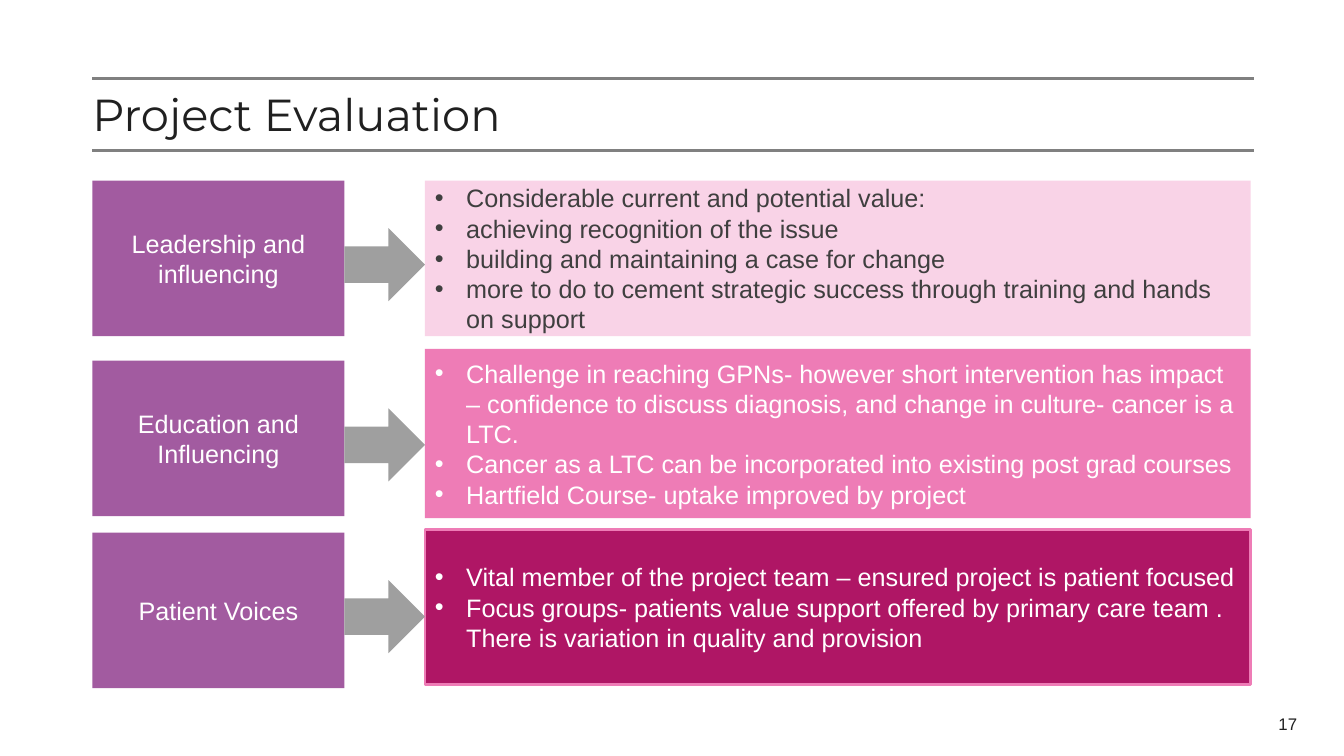
from dataclasses import dataclass

from lxml.etree import SubElement
from pptx import Presentation
from pptx.dml.color import RGBColor
from pptx.enum.shapes import MSO_CONNECTOR, MSO_SHAPE
from pptx.enum.text import MSO_ANCHOR, PP_ALIGN
from pptx.oxml.ns import qn
from pptx.util import Cm, Pt


@dataclass(frozen=True)
class Theme:
    heading_font: str = "Montserrat"
    body_font: str = "Arial"
    title_size: int = 32
    body_size: int = 18
    number_size: int = 12
    ink: str = "202020"
    dark_grey: str = "3F3F3F"
    rule: str = "808080"
    arrow: str = "9F9F9F"
    white: str = "FFFFFF"
    purple: str = "A25BA0"
    pale_pink: str = "F9D3E7"
    pink: str = "EE7CB6"
    magenta: str = "AF1665"


def apply_format(target, values):
    for name, value in values.items():
        setattr(target, name, value)


class SlideBuilder:
    def __init__(self, slide, theme):
        self.slide = slide
        self.theme = theme

    def rule(self, left, right, top):
        connector = self.slide.shapes.add_connector(
            MSO_CONNECTOR.STRAIGHT, Cm(left), Cm(top), Cm(right), Cm(top))
        connector.line.color.rgb = RGBColor.from_string(self.theme.rule)
        connector.line.width = Pt(2.25)
        SubElement(connector.element.spPr, qn("a:effectLst"))

    def block(self, preset, box, fill, outline=None):
        shape = self.slide.shapes.add_shape(preset, *map(Cm, box))
        shape.shadow.inherit = False
        shape.fill.solid()
        shape.fill.fore_color.rgb = RGBColor.from_string(fill)
        if outline:
            shape.line.color.rgb = RGBColor.from_string(outline)
            shape.line.width = Pt(2)
        else:
            shape.line.fill.background()
        return shape

    def text_box(self, box, text, margin=None, **style):
        shape = self.slide.shapes.add_textbox(*map(Cm, box))
        if margin is not None:
            sides = ("left", "top", "right", "bottom")
            apply_format(shape.text_frame, {f"margin_{side}": Cm(margin) for side in sides})
        self.add_text(shape, [text], **style)

    def add_text(self, shape, texts, color, size=None, font=None,
                 align=PP_ALIGN.LEFT, bullets=False):
        frame = shape.text_frame
        apply_format(frame, {"word_wrap": True, "vertical_anchor": MSO_ANCHOR.MIDDLE})
        for index, text in enumerate(texts):
            paragraph = frame.add_paragraph() if index else frame.paragraphs[0]
            paragraph.alignment = align
            run = paragraph.add_run()
            run.text = text
            apply_format(run.font, {"name": font or self.theme.body_font,
                                    "size": Pt(size or self.theme.body_size)})
            run.font.color.rgb = RGBColor.from_string(color)
            if bullets:
                self.bullet(paragraph)

    def bullet(self, paragraph):
        properties = paragraph._p.get_or_add_pPr()
        indent = Cm(0.79)
        properties.set("marL", str(indent))
        properties.set("indent", str(-indent))
        SubElement(properties, qn("a:buFont"), typeface="Arial")
        SubElement(properties, qn("a:buChar"), char="•")


THEME = Theme()
LEFT, TOPIC_WIDTH, ROW_HEIGHT = 2.33, 6.35, 3.92
FINDINGS_LEFT, FINDINGS_WIDTH = 10.71, 20.81
ARROW_HEIGHT, ARROW_OFFSET = 1.84, 1.2

# Topic, topic top, findings top and height, fill, outline, text colour, findings
ROWS = [
    ("Leadership and influencing", 4.55, 4.55, ROW_HEIGHT,
     THEME.pale_pink, None, THEME.dark_grey,
     ["Considerable current and potential value:",
      "achieving recognition of the issue",
      "building and maintaining a case for change",
      "more to do to cement strategic success through training and hands on support"]),
    ("Education and Influencing", 9.09, 8.79, 4.27,
     THEME.pink, None, THEME.white,
     ["Challenge in reaching GPNs- however short intervention has impact – confidence "
      "to discuss diagnosis, and change in culture- cancer is a LTC.",
      "Cancer as a LTC can be incorporated into existing post grad courses",
      "Hartfield Course- uptake improved by project"]),
    ("Patient Voices", 13.42, 13.34, ROW_HEIGHT,
     THEME.magenta, THEME.pink, THEME.white,
     ["Vital member of the project team – ensured project is patient focused",
      "Focus groups- patients value support offered by primary care team . "
      "There is variation in quality and provision"]),
]


def main():
    presentation = Presentation()
    apply_format(presentation, {"slide_width": Cm(33.87), "slide_height": Cm(19.05)})
    slide = presentation.slides.add_slide(presentation.slide_layouts[6])
    builder = SlideBuilder(slide, THEME)

    # Title between two rules
    for top in (1.98, 3.8):
        builder.rule(LEFT, 31.6, top)
    builder.text_box((LEFT, 1.96, 29.74, 1.83), "Project Evaluation", margin=0,
                     color=THEME.ink, size=THEME.title_size, font=THEME.heading_font)

    # Page number
    builder.text_box((25.04, 17.73, 7.9, 1.02), "17", color=THEME.ink,
                     size=THEME.number_size, align=PP_ALIGN.RIGHT)

    # Rows: topic, findings and the arrow between them
    arrow_left = LEFT + TOPIC_WIDTH
    for topic, top, findings_top, height, fill, outline, color, findings in ROWS:
        topic_box = builder.block(
            MSO_SHAPE.RECTANGLE, (LEFT, top, TOPIC_WIDTH, ROW_HEIGHT), THEME.purple)
        builder.add_text(topic_box, [topic], THEME.white, align=PP_ALIGN.CENTER)
        findings_box = builder.block(
            MSO_SHAPE.RECTANGLE,
            (FINDINGS_LEFT, findings_top, FINDINGS_WIDTH, height), fill, outline)
        builder.add_text(findings_box, findings, color, bullets=True)
        builder.block(
            MSO_SHAPE.RIGHT_ARROW,
            (arrow_left, top + ARROW_OFFSET, FINDINGS_LEFT - arrow_left, ARROW_HEIGHT),
            THEME.arrow)

    presentation.save("out.pptx")


if __name__ == "__main__":
    main()
